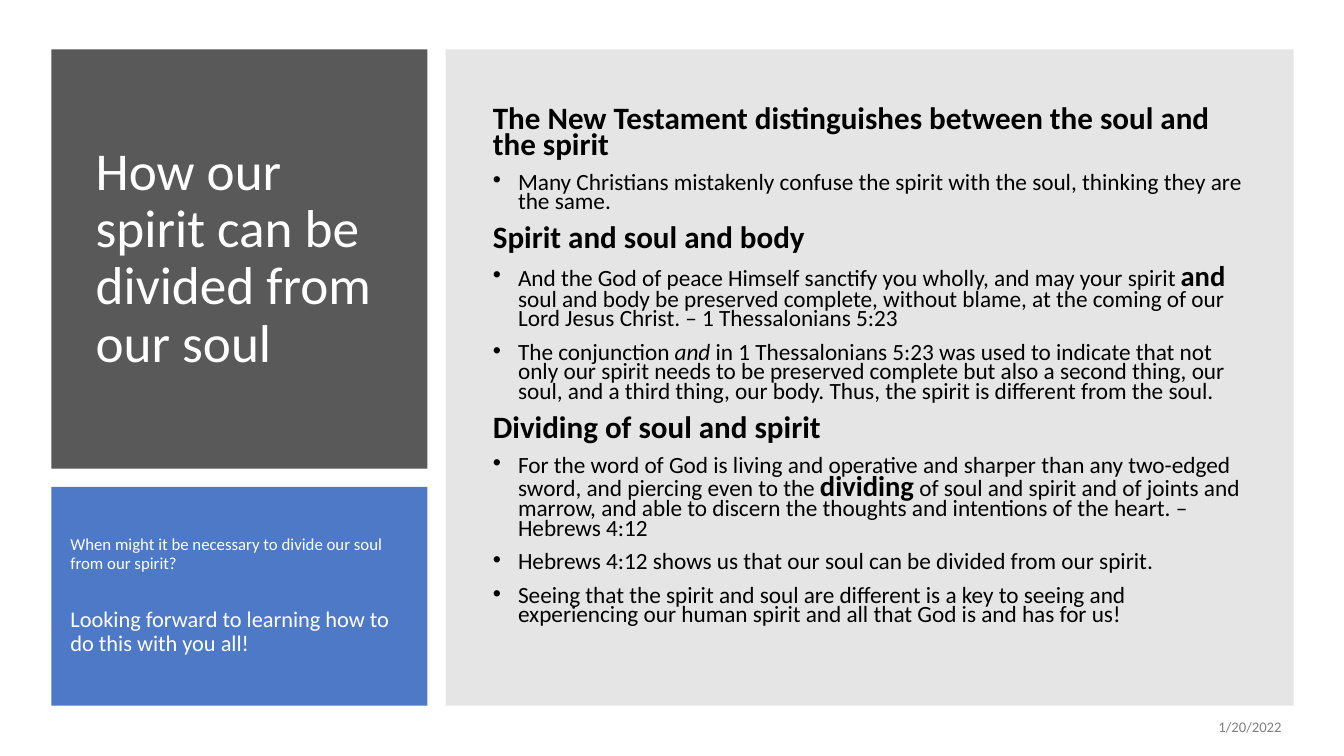
from lxml import etree
from pptx import Presentation
from pptx.dml.color import RGBColor
from pptx.enum.shapes import MSO_SHAPE
from pptx.enum.text import MSO_ANCHOR, PP_ALIGN
from pptx.oxml.ns import qn
from pptx.util import Inches, Pt

RECTANGLE = MSO_SHAPE.RECTANGLE
MIDDLE = MSO_ANCHOR.MIDDLE
LEFT, RIGHT = PP_ALIGN.LEFT, PP_ALIGN.RIGHT
FONT = "Calibri"
WHITE, BLACK, GRAY = "FFFFFF", "000000", "808080"
CHARCOAL, BLUE = "595959", "4472C4"
HEADING, BODY, EMPHASIS = 22.2, 16.6, 20.4


def paint(target, color, opacity=100):
    """Colour a fill or a font from a hex string."""
    if hasattr(target, "solid"):
        target.solid()
        rgb = target.fore_color
    else:
        rgb = target.color
    rgb.rgb = RGBColor.from_string(color)
    if opacity < 100:
        tint = target._xPr.find(qn("a:solidFill"))[0]
        etree.SubElement(tint, qn("a:alpha"), val=str(opacity * 1000))


def write(frame, runs, size=BODY, color=BLACK, bold=False, line=0.9,
          before=0, after=0, align=LEFT, bullet=False):
    """Add a paragraph; runs alternate between plain text and (text, style)."""
    first = frame.paragraphs[0]
    paragraph = frame.add_paragraph() if first.runs else first
    paragraph.alignment = align
    paragraph.line_spacing = line
    paragraph.space_before, paragraph.space_after = Pt(before), Pt(after)
    if bullet:
        properties = paragraph._p.get_or_add_pPr()
        properties.set("marL", str(Inches(0.25)))
        properties.set("indent", str(-Inches(0.25)))
        etree.SubElement(properties, qn("a:buFont"), typeface="Arial")
        etree.SubElement(properties, qn("a:buChar"), char="•")
    for part in [runs] if isinstance(runs, str) else runs:
        words, style = (part, "") if isinstance(part, str) else part
        run = paragraph.add_run()
        run.text = words
        run.font.name = FONT
        run.font.size = Pt(EMPHASIS if style == "bold" else size)
        run.font.bold = bold or style == "bold"
        run.font.italic = style == "italic"
        paint(run.font, color)


presentation = Presentation()
presentation.slide_width = Inches(13.33)
presentation.slide_height = Inches(7.5)
slide = presentation.slides.add_slide(presentation.slide_layouts[6])

# Grid: two columns, the left one split into two rows
MARGIN_X, MARGIN_Y, GAP = 0.51, 0.49, 0.18
SIDE_W, MAIN_W = 3.73, 8.41
TITLE_H, QUESTION_H = 4.16, 2.17
MAIN_X = MARGIN_X + SIDE_W + GAP
QUESTION_Y = MARGIN_Y + TITLE_H + GAP
MAIN_H = TITLE_H + GAP + QUESTION_H

# Each panel with its text inset from the edges
areas = [
    (MARGIN_X, MARGIN_Y, SIDE_W, TITLE_H, CHARCOAL, 100, 0.34, 0.31),
    (MARGIN_X, QUESTION_Y, SIDE_W, QUESTION_H, BLUE, 95, 0.09, 0.08),
    (MAIN_X, MARGIN_Y, MAIN_W, MAIN_H, GRAY, 20, 0.37, 0.26),
    (9.81, MARGIN_Y + MAIN_H + 0.01, 3, 0.4, None, 0, 0, 0),
]
frames = []
for x, y, width, height, color, opacity, inset_x, inset_y in areas:
    if color:
        panel = slide.shapes.add_shape(
            RECTANGLE, Inches(x), Inches(y), Inches(width), Inches(height))
        panel.shadow.inherit = False
        panel.line.fill.background()
        paint(panel.fill, color, opacity)
    frame = slide.shapes.add_textbox(
        Inches(x + inset_x), Inches(y + inset_y),
        Inches(width - 2 * inset_x), Inches(height - 2 * inset_y)).text_frame
    frame.word_wrap = True
    frame.vertical_anchor = MIDDLE
    frames.append(frame)
title, question, lesson, date = frames

# Left column
write(title, "How our spirit can be divided from our soul", size=38, color=WHITE)
write(question, "When might it be necessary to divide our soul from our spirit?",
      size=12, color=WHITE, after=6)
write(question, "Looking forward to learning how to do this with you all!",
      size=16, color=WHITE, before=19, after=6)

# Lesson: headings with their points
sections = {
    "The New Testament distinguishes between the soul and the spirit": [
        "Many Christians mistakenly confuse the spirit with the soul, "
        "thinking they are the same.",
    ],
    "Spirit and soul and body": [
        ["And the God of peace Himself sanctify you wholly, and may your spirit ",
         ("and", "bold"),
         " soul and body be preserved complete, without blame, at the coming of "
         "our Lord Jesus Christ. – 1 Thessalonians 5:23"],
        ["The conjunction ", ("and", "italic"),
         " in 1 Thessalonians 5:23 was used to indicate that not only our spirit "
         "needs to be preserved complete but also a second thing, our soul, and a "
         "third thing, our body. Thus, the spirit is different from the soul."],
    ],
    "Dividing of soul and spirit": [
        ["For the word of God is living and operative and sharper than any "
         "two-edged sword, and piercing even to the ",
         ("dividing", "bold"),
         " of soul and spirit and of joints and marrow, and able to discern the "
         "thoughts and intentions of the heart. – Hebrews 4:12"],
        "Hebrews 4:12 shows us that our soul can be divided from our spirit.",
        "Seeing that the spirit and soul are different is a key to seeing and "
        "experiencing our human spirit and all that God is and has for us!",
    ],
}
lesson.margin_bottom = Inches(0.25)
for heading, points in sections.items():
    write(lesson, heading, size=HEADING, bold=True, line=0.7, before=10)
    for point in points:
        write(lesson, point, line=0.7, before=10, bullet=True)

# Date
write(date, "1/20/2022", size=10.5, color=GRAY, line=1.0, after=6, align=RIGHT)

presentation.save("out.pptx")
